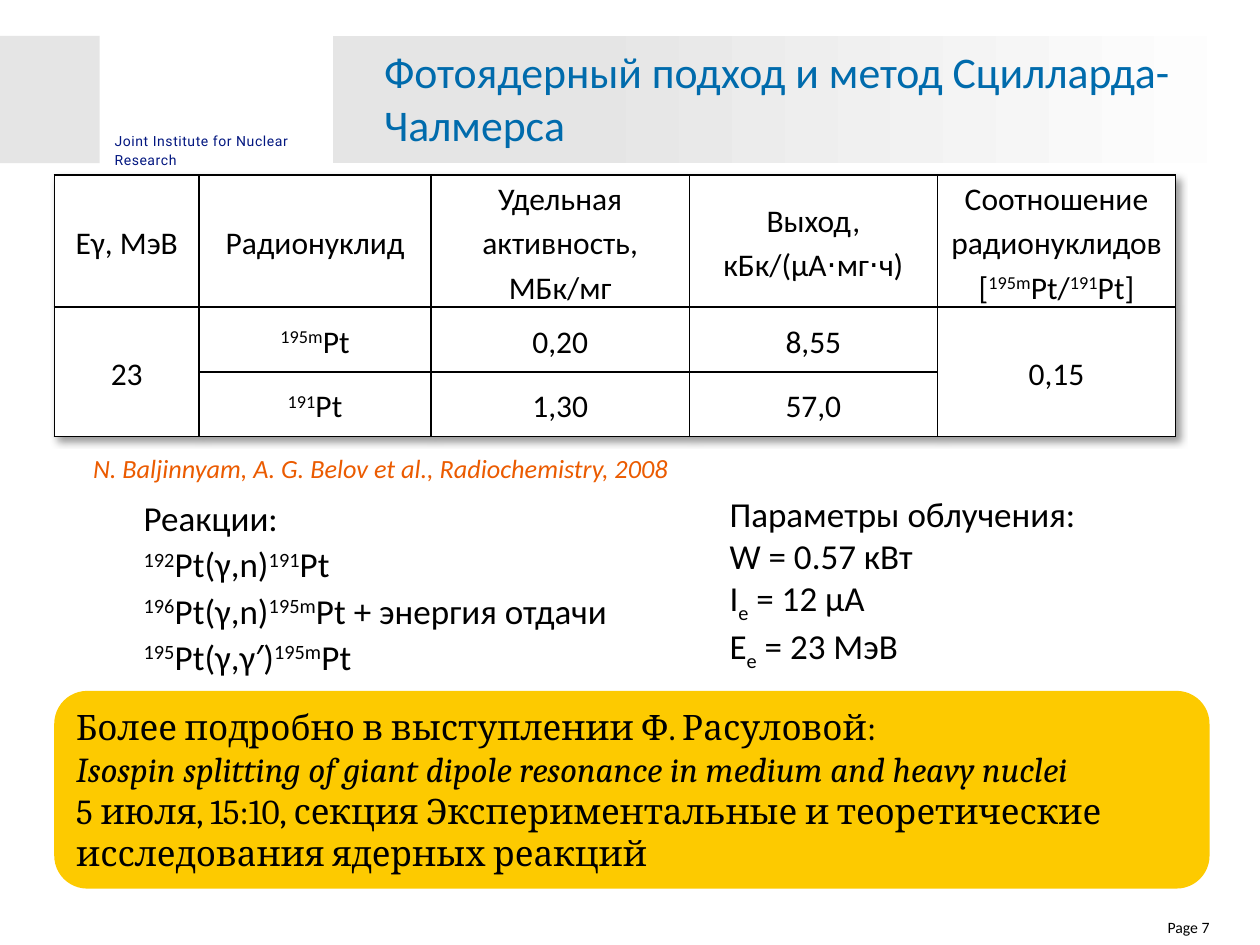
from lxml.etree import SubElement
from pptx import Presentation
from pptx.dml.color import RGBColor
from pptx.enum.shapes import MSO_SHAPE
from pptx.enum.text import MSO_ANCHOR, PP_ALIGN
from pptx.oxml import parse_xml
from pptx.oxml.ns import nsdecls, qn
from pptx.util import Pt

COLORS = {
    "white": "FFFFFF",
    "black": "000000",
    "band": "E5E5E5",
    "navy": "031780",
    "title": "006BAC",
    "orange": "EB5B00",
    "yellow": "FDCA00",
}
BASELINES = {"^": "30000", "_": "-25000"}
COLUMN_WIDTHS = [82.8, 132.5, 147.6, 141.8, 136.1]
ROW_HEIGHTS = [75.4, 37.1, 37.1]
TABLE_ROWS = [
    ["Eγ, МэВ", "Радионуклид", "Удельная активность, MБк/мг",
     "Выход, кБк/(μА⋅мг⋅ч)", "Соотношение радионуклидов [^195m|Pt/^191|Pt]"],
    ["23", "^195m|Pt", "0,20", "8,55", "0,15"],
    ["", "^191|Pt", "1,30", "57,0", ""],
]
REACTIONS = ["Реакции:", "^192|Pt(γ,n)^191|Pt",
             "^196|Pt(γ,n)^195m|Pt + энергия отдачи", "^195|Pt(γ,γ′)^195m|Pt"]
PARAMETERS = ["Параметры облучения:", "W = 0.57 кВт",
              "I_e| = 12 μА", "E_e| = 23 МэВ"]
ANNOUNCEMENT = [
    "Более подробно в выступлении Ф. Расуловой:",
    "Isospin splitting of giant dipole resonance in medium and heavy nuclei",
    "5 июля, 15:10, секция Экспериментальные и теоретические исследования ядерных реакций",
]


def color(name):
    return RGBColor.from_string(COLORS[name])


def add_span(para, text, size, font, ink, italic, spacing, baseline=None):
    if not text:
        return
    span = para.add_run()
    span.text = text
    span.font.size = Pt(size)
    span.font.name = font
    span.font.color.rgb = color(ink)
    span.font.italic = italic
    properties = span._r.get_or_add_rPr()
    if spacing:
        properties.set("spc", str(spacing))
    if baseline:
        properties.set("baseline", baseline)


def write(frame, lines, size=20, font="Calibri", ink="black", italic_lines=(),
          align=PP_ALIGN.LEFT, leading=1.0, spacing=0):
    for index, line in enumerate(lines):
        para = frame.paragraphs[0] if index == 0 else frame.add_paragraph()
        para.alignment = align
        para.line_spacing = leading
        style = (size, font, ink, index in italic_lines, spacing)
        for chunk in line.split("|"):
            mark = "_" if "_" in chunk else "^"
            plain, _, shifted = chunk.partition(mark)
            add_span(para, plain, *style)
            add_span(para, shifted, *style, baseline=BASELINES[mark])


def add_text(page, place, lines, inset=0, wrap=True, anchor=MSO_ANCHOR.TOP, **style):
    box = page.shapes.add_textbox(*map(Pt, place))
    frame = box.text_frame
    frame.word_wrap = wrap
    frame.vertical_anchor = anchor
    frame.margin_left = frame.margin_right = Pt(inset)
    frame.margin_top = frame.margin_bottom = Pt(inset / 2)
    write(frame, lines, **style)
    return box


def add_panel(page, place, fill, kind=MSO_SHAPE.RECTANGLE):
    panel = page.shapes.add_shape(kind, *map(Pt, place))
    panel.shadow.inherit = False
    panel.line.fill.background()
    panel.fill.solid()
    panel.fill.fore_color.rgb = color(fill)
    return panel


def add_header(page):
    add_panel(page, (0, 20.5, 56.9, 72.7), "band")
    fade = add_panel(page, (190, 20.5, 530, 72.7), "band")
    fade.fill.gradient()
    fade.fill.gradient_angle = 0
    for stop, position, name in zip(fade.fill.gradient_stops, (0.26, 1), ("band", "white")):
        stop.position = position
        stop.color.rgb = color(name)
    add_text(page, (65.5, 74.9, 122, 22), ["Joint Institute for Nuclear", "Research"],
             size=8, font="Roboto", ink="navy", leading=1.1, spacing=30)


def add_borders(cell):
    properties = cell._tc.get_or_add_tcPr()
    for position, side in enumerate(("lnL", "lnR", "lnT", "lnB")):
        border = parse_xml(f'<a:{side} {nsdecls("a")} w="12700"/>')
        fill = SubElement(border, qn("a:solidFill"))
        SubElement(fill, qn("a:srgbClr"), val=COLORS["black"])
        properties.insert(position, border)


def add_results_table(page):
    graphic = page.shapes.add_table(
        len(ROW_HEIGHTS), len(COLUMN_WIDTHS), Pt(31), Pt(100),
        Pt(sum(COLUMN_WIDTHS)), Pt(sum(ROW_HEIGHTS)))
    table = graphic.table
    table.first_row = table.horz_banding = False
    for column, width in zip(table.columns, COLUMN_WIDTHS):
        column.width = Pt(width)
    for row, height in zip(table.rows, ROW_HEIGHTS):
        row.height = Pt(height)
    for column in (0, 4):
        table.cell(1, column).merge(table.cell(2, column))
    for row, texts in enumerate(TABLE_ROWS):
        for column, text in enumerate(texts):
            cell = table.cell(row, column)
            cell.fill.solid()
            cell.fill.fore_color.rgb = color("white")
            cell.vertical_anchor = MSO_ANCHOR.MIDDLE
            cell.margin_left = cell.margin_right = Pt(5)
            cell.margin_top = cell.margin_bottom = 0
            add_borders(cell)
            if text:
                write(cell.text_frame, [text], size=18, align=PP_ALIGN.CENTER, leading=1.15)
    table._tbl.tblPr.insert(0, parse_xml(
        f'<a:effectLst {nsdecls("a")}><a:outerShdw blurRad="50800" dist="38100" dir="2700000">'
        f'<a:srgbClr val="{COLORS["black"]}"><a:alpha val="40000"/></a:srgbClr>'
        '</a:outerShdw></a:effectLst>'))


def add_announcement(page):
    panel = add_panel(page, (31, 394.8, 660.2, 113), "yellow", MSO_SHAPE.ROUNDED_RECTANGLE)
    panel.text_frame.word_wrap = True
    panel.text_frame.vertical_anchor = MSO_ANCHOR.MIDDLE
    write(panel.text_frame, ANNOUNCEMENT, font="Cambria", italic_lines=(1,))


def main():
    deck = Presentation()
    deck.slide_width, deck.slide_height = Pt(720), Pt(540)
    page = deck.slides.add_slide(deck.slide_layouts[6])
    add_header(page)
    add_text(page, (82.1, 281.5, 283.7, 113), REACTIONS, leading=1.1)
    add_text(page, (645.8, 524.2, 45.4, 15.8), ["Page 7"], size=9, align=PP_ALIGN.RIGHT)
    add_results_table(page)
    add_text(page, (416.9, 281.5, 229.7, 102.2), PARAMETERS, wrap=False)
    citation = add_text(page, (39.6, 253, 607.7, 27.4),
                        ["N. Baljinnyam, A. G. Belov et al., Radiochemistry, 2008"],
                        inset=7.2, size=15, ink="orange", italic_lines=(0,),
                        align=PP_ALIGN.JUSTIFY, leading=1.1)
    citation.text_frame.paragraphs[0]._p.get_or_add_pPr().set("marL", str(Pt(6.5)))
    add_announcement(page)
    add_text(page, (212.4, 22.6, 479.5, 66.2),
             ["Фотоядерный подход и метод Сцилларда-Чалмерса"],
             inset=7.2, anchor=MSO_ANCHOR.MIDDLE, size=25, ink="title")
    deck.save("out.pptx")


if __name__ == "__main__":
    main()
